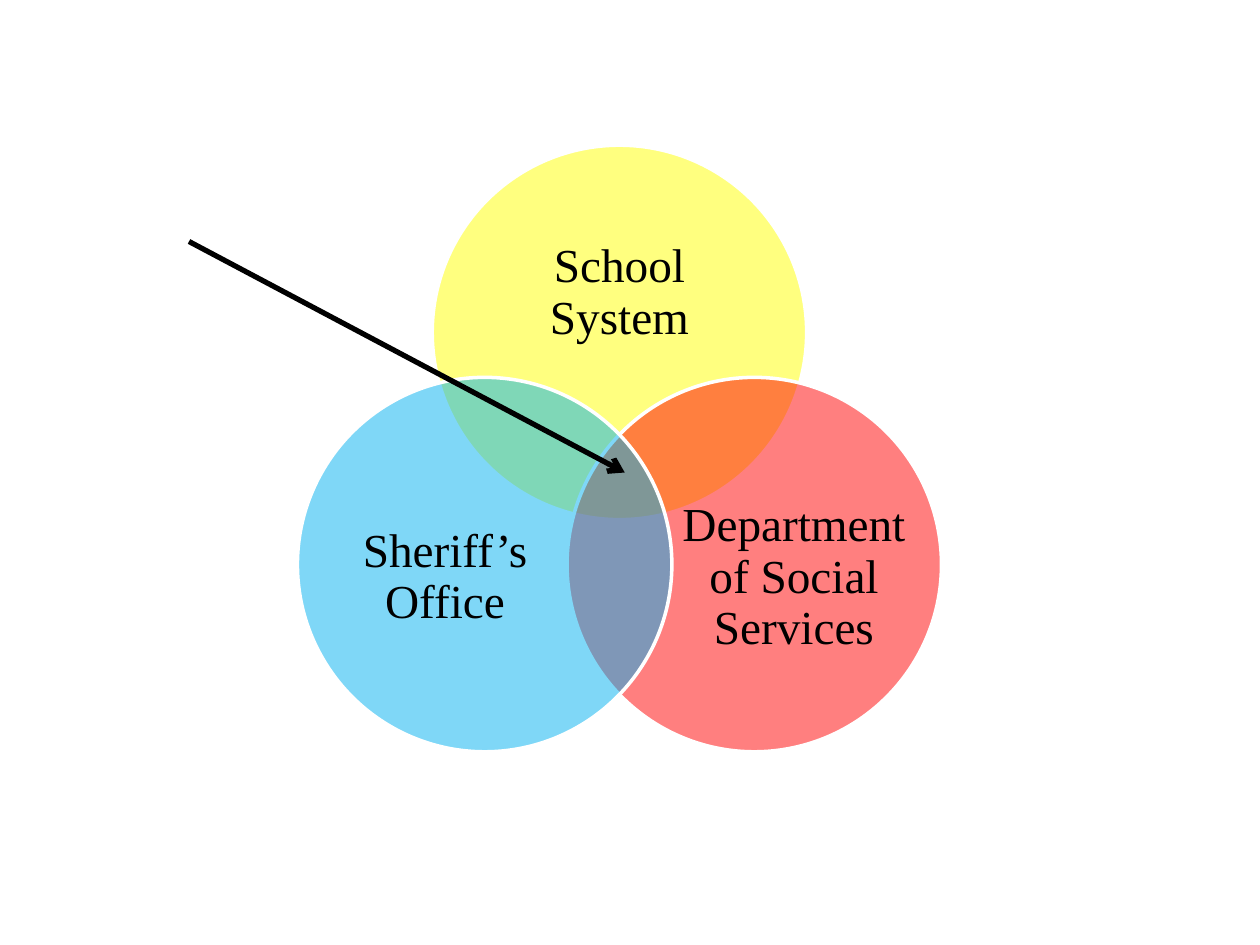
from dataclasses import dataclass

from lxml import etree
from pptx import Presentation
from pptx.dml.color import RGBColor
from pptx.enum import shapes, text
from pptx.oxml import ns
from pptx.util import Pt


@dataclass(frozen=True)
class Theme:
    font: str = "Times New Roman"
    label_size: float = 27
    ink: str = "000000"
    outline: str = "FFFFFF"
    school: str = "FFFF00"
    services: str = "FF0000"
    sheriff: str = "00B0F0"
    opacity: int = 50
    outline_width: float = 2
    arrow_width: float = 3


THEME = Theme()

# label, colour, circle offset and label box, all in circle diameters
CIRCLES = [
    ("School System", THEME.school, (0.36, 0), (0.13, 0.17, 0.74, 0.45)),
    ("Department of Social Services", THEME.services, (0.72, 0.62), (0.306, 0.26, 0.6, 0.55)),
    ("Sheriff’s Office", THEME.sheriff, (0, 0.62), (0.094, 0.26, 0.6, 0.55)),
]


def apply_format(target, values):
    for name, value in values.items():
        setattr(target, name, value)


def add_circle(group, left, top, diameter, color):
    circle = group.shapes.add_shape(
        shapes.MSO_SHAPE.OVAL, Pt(left), Pt(top), Pt(diameter), Pt(diameter))
    circle.shadow.inherit = False
    circle.fill.solid()
    circle.fill.fore_color.rgb = RGBColor.from_string(color)
    fill_color = circle.fill._xPr.find(f".//{ns.qn('a:srgbClr')}")
    etree.SubElement(fill_color, ns.qn("a:alpha"), val=str(THEME.opacity * 1000))
    circle.line.color.rgb = RGBColor.from_string(THEME.outline)
    circle.line.width = Pt(THEME.outline_width)


def add_label(group, box, wording):
    label = group.shapes.add_textbox(*(Pt(length) for length in box))
    frame = label.text_frame
    apply_format(frame, {
        "word_wrap": True, "vertical_anchor": text.MSO_ANCHOR.MIDDLE,
        "margin_left": 0, "margin_right": 0, "margin_top": 0, "margin_bottom": 0})
    paragraph = frame.paragraphs[0]
    apply_format(paragraph, {"alignment": text.PP_ALIGN.CENTER, "line_spacing": 0.9})
    run = paragraph.add_run()
    run.text = wording
    apply_format(run.font, {"name": THEME.font, "size": Pt(THEME.label_size)})
    run.font.color.rgb = RGBColor.from_string(THEME.ink)


def add_venn(slide, left, top, width):
    """Three overlapping circles; the whole is 1.72 diameters wide."""
    diameter = width / 1.72
    group = slide.shapes.add_group_shape()
    for wording, color, (across, down), (x, y, w, h) in CIRCLES:
        circle_left = left + across * diameter
        circle_top = top + down * diameter
        add_circle(group, circle_left, circle_top, diameter, color)
        add_label(group, (circle_left + x * diameter, circle_top + y * diameter,
                          w * diameter, h * diameter), wording)


def add_arrow(slide, left, top, width, height):
    """Arrow from the top left to the bottom right of its box."""
    arrow = slide.shapes.add_connector(
        shapes.MSO_CONNECTOR.STRAIGHT,
        Pt(left), Pt(top), Pt(left + width), Pt(top + height))
    arrow.line.color.rgb = RGBColor.from_string(THEME.ink)
    arrow.line.width = Pt(THEME.arrow_width)
    etree.SubElement(arrow.line._get_or_add_ln(), ns.qn("a:tailEnd"), type="arrow")
    etree.SubElement(arrow._element.spPr, ns.qn("a:effectLst"))


def main():
    presentation = Presentation()
    apply_format(presentation, {"slide_width": Pt(720), "slide_height": Pt(540)})
    slide = presentation.slides.add_slide(presentation.slide_layouts[6])
    add_venn(slide, left=170, top=83, width=368)
    add_arrow(slide, left=108, top=138, width=249, height=132)
    presentation.save("out.pptx")


if __name__ == "__main__":
    main()
